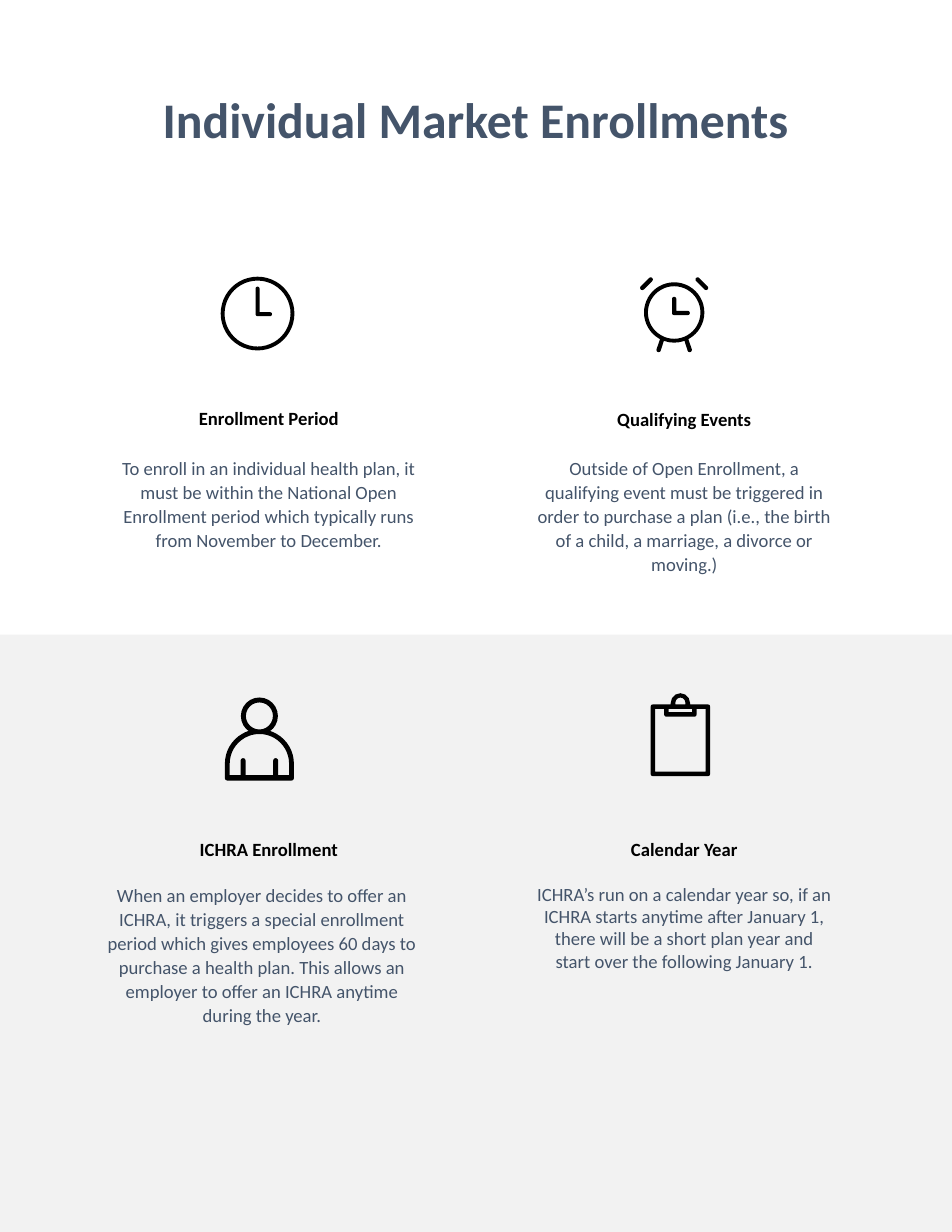
"""Build the one-page flyer on individual market enrollments."""
from collections import namedtuple
from math import cos, radians, sin

from lxml.etree import SubElement
from pptx import Presentation
from pptx.dml.color import RGBColor
from pptx.enum.shapes import MSO_SHAPE
from pptx.enum.text import MSO_ANCHOR, MSO_AUTO_SIZE, PP_ALIGN
from pptx.oxml.ns import qn
from pptx.util import Pt

RECTANGLE = MSO_SHAPE.RECTANGLE
TOP, MIDDLE = MSO_ANCHOR.TOP, MSO_ANCHOR.MIDDLE
CENTER = PP_ALIGN.CENTER
GROW = MSO_AUTO_SIZE.SHAPE_TO_FIT_TEXT

COLORS = {"band": "F2F2F2", "ink": "000000", "slate": "44546A"}
PAGE_WIDTH, PAGE_HEIGHT = 612, 792
COLUMNS = (74.2, 341.3)
COLUMN_WIDTH = 197.3
UNITS = 100

Arc = namedtuple("Arc", "x y radius start end")


def arc_point(arc, angle):
    turn = radians(angle)
    return arc.x + arc.radius * cos(turn), arc.y + arc.radius * sin(turn)


def extent(part):
    if not isinstance(part, Arc):
        return [part]
    return [arc_point(part, part.start + (part.end - part.start) * i / 36) for i in range(37)]


def circle(x, y, radius):
    return [Arc(x, y, radius, 0, 180), Arc(x, y, radius, 180, 360)]


def rounded_bottom(left, right, bottom, radius):
    return [Arc(right - radius, bottom - radius, radius, 0, 90),
            Arc(left + radius, bottom - radius, radius, 90, 180)]


def clock_hands(x, top, y, right, radius):
    return [Arc(x, top, radius, 180, 360), (x + radius, y - radius),
            Arc(right, y, radius, -90, 90), Arc(x, y, radius, 90, 180)]


def clock():
    x, y = 165.6, 201.6
    return [circle(x, y, 23.7), circle(x, y, 21.2),
            clock_hands(x, 185.6, 202, 173.6, 1.3)]


def alarm_clock():
    x, y, radius = 433.4, 200.9, 19.4
    case = [Arc(x, y, radius, 118, 422), Arc(x + 10, 225, 1.4, -20, 160),
            Arc(x, y, radius, 70, 110), Arc(x - 10, 225, 1.4, 20, 200)]
    left_bell = [Arc(x - 20.5, 185.1, 1.4, 45, 225), Arc(x - 15.1, 179.7, 1.4, 225, 405)]
    right_bell = [Arc(x + 20.5, 185.1, 1.4, -45, 135), Arc(x + 15.1, 179.7, 1.4, 135, 315)]
    return [case, circle(x, y, 16.9), left_bell, right_bell,
            clock_hands(x, 192.2, 201.2, 442.1, 1.4)]


def person():
    x, head_y, body_y, floor = 166.8, 460.3, 491, 498.3
    outline = [Arc(x, head_y, 11.9, 124, 416), Arc(x, body_y, 22.2, -72, 0),
               *rounded_bottom(x - 22.2, x + 22.2, 501.8, 1.6),
               Arc(x, body_y, 22.2, 180, 252)]
    body = [Arc(x, body_y, 19.1, 180, 360), (x + 19.1, floor)]
    for arm in (x + 10.5, x - 10.5):
        body += [(arm + 1.6, floor), Arc(arm, 489, 1.6, 360, 180), (arm - 1.6, floor)]
    body.append((x - 19.1, floor))
    return [outline, circle(x, head_y, 8.7), body]


def clipboard():
    x, top, inner_top = 437.4, 452.9, 455.8
    outline = [Arc(x, 451.9, 6.2, 180, 360), (x + 6.2, top),
               Arc(x + 17.7, top + 1.4, 1.4, -90, 0),
               *rounded_bottom(x - 19.1, x + 19.1, 499, 1.4),
               Arc(x - 17.7, top + 1.4, 1.4, 180, 270), (x - 6.2, top)]
    loop = [Arc(x, 451.7, 3.2, 180, 360), (x + 3.2, top), (x - 3.2, top)]
    slot = [(x - 7.5, inner_top), (x + 7.5, inner_top), (x + 7.5, 457.9), (x - 7.5, 457.9)]
    paper = [(x - 10.4, inner_top), (x - 16.2, inner_top), (x - 16.2, 496.1),
             (x + 16.2, 496.1), (x + 16.2, inner_top), (x + 10.4, inner_top),
             *rounded_bottom(x - 10.4, x + 10.4, 460.8, 1.4)]
    return [outline, loop, slot, paper]


class Flyer:
    """Holds the flyer's style and its current slide."""

    font = "Calibri"
    inset = Pt(3.6)

    def __init__(self, deck):
        self.slide = deck.slides.add_slide(deck.slide_layouts[6])

    def paint(self, shape, color):
        shape.fill.solid()
        shape.fill.fore_color.rgb = RGBColor.from_string(COLORS[color])
        shape.line.fill.background()
        shape.shadow.inherit = False

    def band(self, left, top, width, height):
        shape = self.slide.shapes.add_shape(
            RECTANGLE, Pt(left), Pt(top), Pt(width), Pt(height))
        self.paint(shape, "band")

    def icon(self, contours):
        points = [point for contour in contours for part in contour for point in extent(part)]
        xs, ys = zip(*points)
        left, top, right, bottom = [
            round(edge * UNITS) for edge in (min(xs), min(ys), max(xs), max(ys))]
        builder = self.slide.shapes.build_freeform(left, top, scale=Pt(1) / UNITS)
        builder.add_line_segments([(right, top), (right, bottom), (left, bottom)], close=True)
        shape = builder.convert_to_shape()
        outline = shape.element.find(".//" + qn("a:path"))
        for child in list(outline):
            outline.remove(child)
        for contour in contours:
            self.contour(outline, contour, left, top)
        self.paint(shape, "ink")

    def contour(self, outline, parts, left, top):
        tag = "a:moveTo"
        for part in parts:
            curved = isinstance(part, Arc)
            x, y = arc_point(part, part.start) if curved else part
            SubElement(SubElement(outline, qn(tag)), qn("a:pt"),
                       x=str(round(x * UNITS) - left), y=str(round(y * UNITS) - top))
            if curved:
                radius = str(round(part.radius * UNITS))
                SubElement(outline, qn("a:arcTo"), wR=radius, hR=radius,
                           stAng=str(part.start % 360 * 60000),
                           swAng=str((part.end - part.start) * 60000))
            tag = "a:lnTo"
        SubElement(outline, qn("a:close"))

    def text(self, words, left, top, width, height, size=12, color="slate",
             bold=False, anchor=TOP, spacing=1.0, after=0):
        box = self.slide.shapes.add_textbox(Pt(left), Pt(top), Pt(width), Pt(height))
        frame = box.text_frame
        frame.word_wrap = True
        frame.auto_size = GROW
        frame.vertical_anchor = anchor
        frame.margin_left = frame.margin_right = self.inset
        frame.margin_top = frame.margin_bottom = self.inset
        para = frame.paragraphs[0]
        para.alignment = CENTER
        para.line_spacing = spacing
        para.space_after = Pt(after)
        span = para.add_run()
        span.text = words
        span.font.name = self.font
        span.font.size = Pt(size)
        span.font.bold = bold
        span.font.color.rgb = RGBColor.from_string(COLORS[color])


def main():
    deck = Presentation()
    deck.slide_width, deck.slide_height = Pt(PAGE_WIDTH), Pt(PAGE_HEIGHT)
    flyer = Flyer(deck)
    flyer.band(0, 408, PAGE_WIDTH, PAGE_HEIGHT - 408)
    flyer.text("Individual Market Enrollments", 0, 53.3, PAGE_WIDTH, 46, size=32, bold=True)

    left, right = COLUMNS
    topics = [
        (clock, "Enrollment Period", (left, 257.8),
         "To enroll in an individual health plan, it must be within the National Open "
         "Enrollment period which typically runs from November to December.",
         (left, 289.4, COLUMN_WIDTH, 108.7), 1.07),
        (alarm_clock, "Qualifying Events", (right, 258.5),
         "Outside of Open Enrollment, a qualifying event must be triggered in order to "
         "purchase a plan (i.e., the birth of a child, a marriage, a divorce or moving.)",
         (right, 289.4, COLUMN_WIDTH, 85), 1.07),
        (person, "ICHRA Enrollment", (left, 535),
         "When an employer decides to offer an ICHRA, it triggers a special enrollment "
         "period which gives employees 60 days to purchase a health plan. This allows an "
         "employer to offer an ICHRA anytime during the year.",
         (62.6, 563.8, 211.7, 116), 1.07),
        (clipboard, "Calendar Year", (right, 535),
         "ICHRA’s run on a calendar year so, if an ICHRA starts anytime after January 1, "
         "there will be a short plan year and start over the following January 1.",
         (right, 563.8, COLUMN_WIDTH, 80), 1.0),
    ]
    for icon, heading, corner, body, place, spacing in topics:
        flyer.icon(icon())
        flyer.text(heading, *corner, COLUMN_WIDTH, 21.6, color="ink", bold=True, anchor=MIDDLE)
        flyer.text(body, *place, spacing=spacing, after=8)
    deck.save("out.pptx")


if __name__ == "__main__":
    main()
